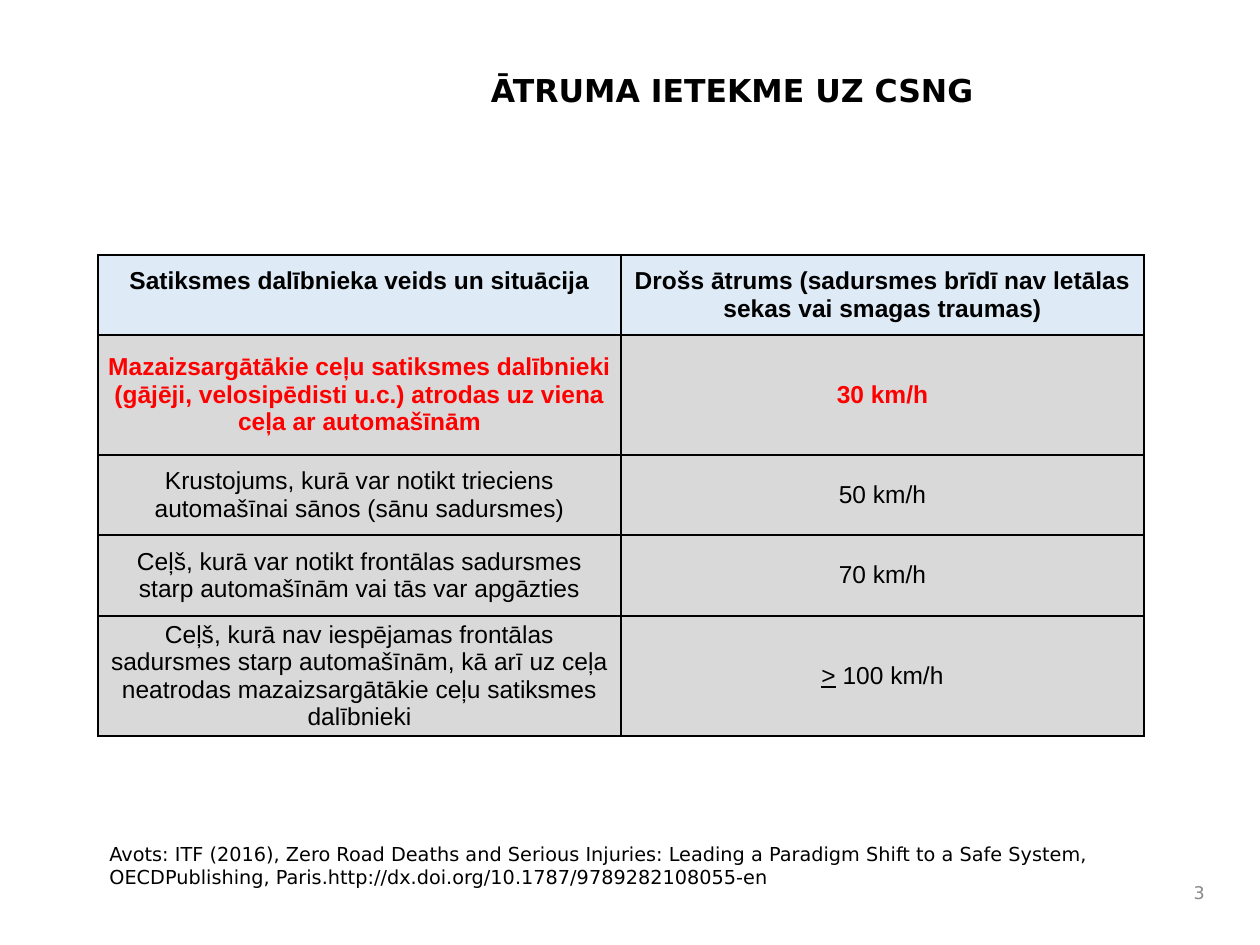
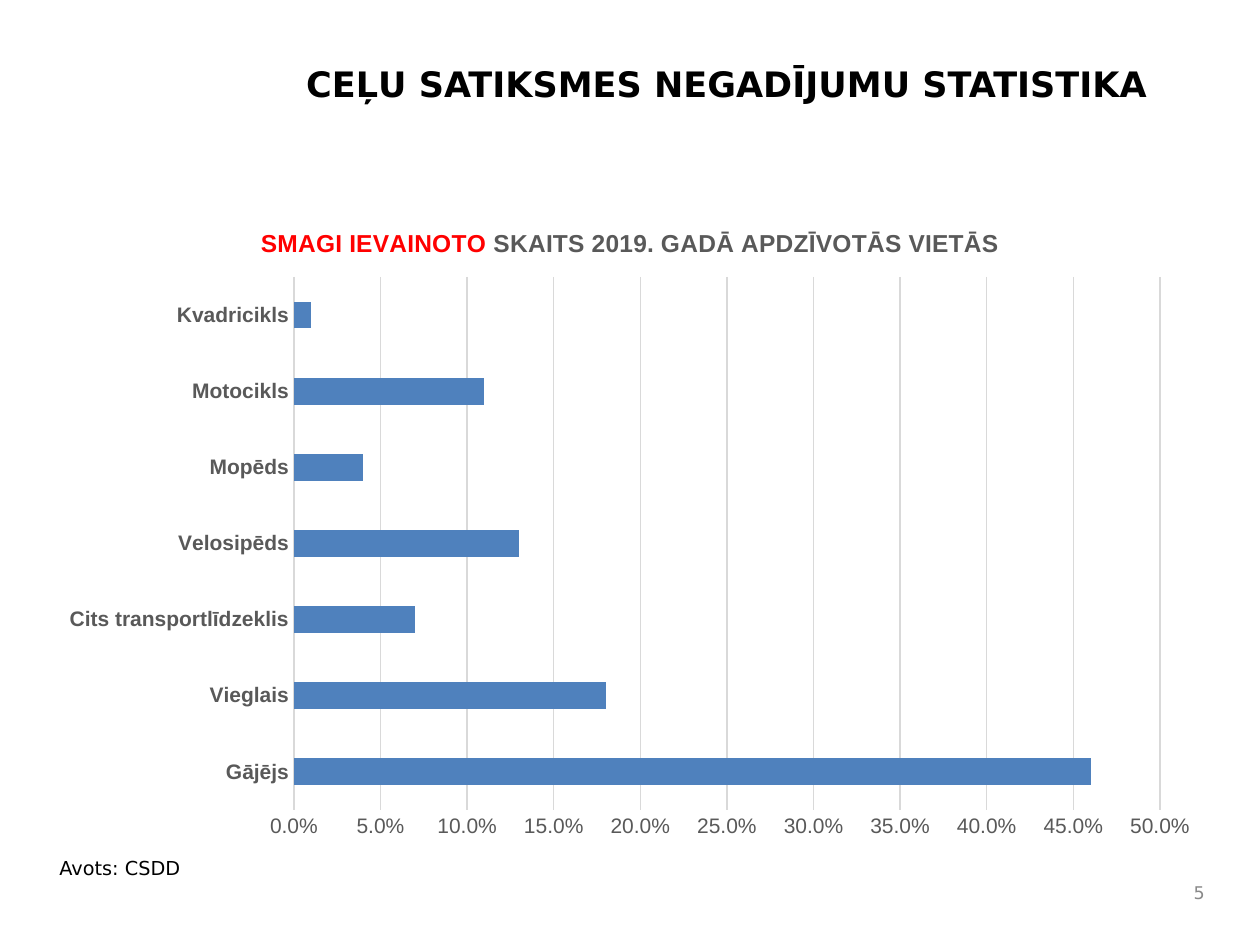
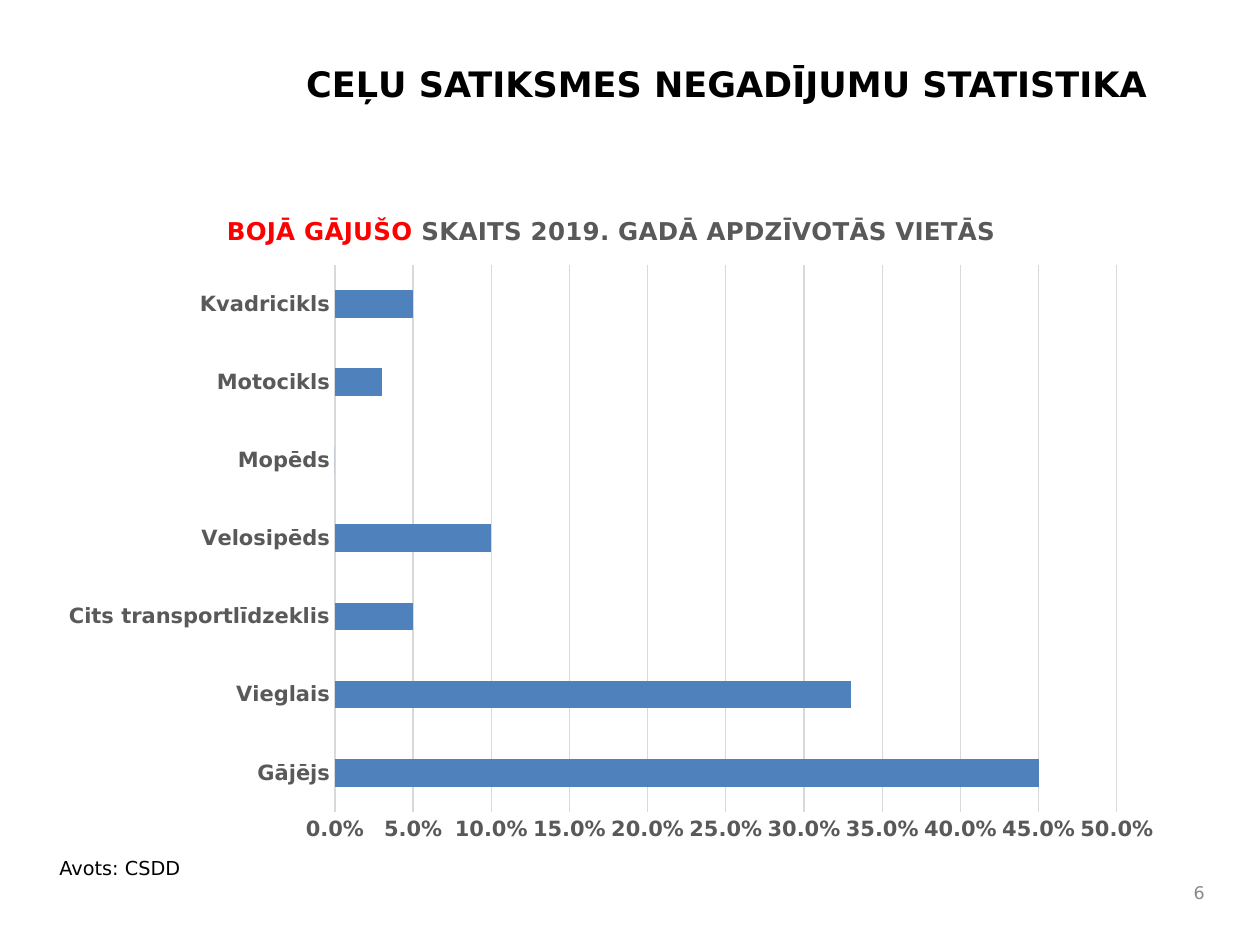
"""Build three slides on speed and road accident statistics."""
from dataclasses import dataclass

from lxml import etree
from pptx import Presentation, util as u
from pptx.chart.data import CategoryChartData
from pptx.dml.color import RGBColor
from pptx.enum import chart as charts, text
from pptx.oxml.ns import qn


@dataclass(frozen=True)
class Theme:
    black: str = "000000"
    red: str = "FF0000"
    grey: str = "595959"
    number_grey: str = "898989"
    rule: str = "D9D9D9"
    header: str = "DEEAF6"
    bar: str = "4F81BD"
    wide: str = "DejaVu Sans"
    plain: str = "Arial"
    title: int = 20
    short_title: int = 18
    body: int = 14
    axis: int = 12
    source: int = 11
    number: int = 10


THEME = Theme()
STATISTICS = "CEĻU SATIKSMES NEGADĪJUMU STATISTIKA"
ROAD_USERS = ["Gājējs", "Vieglais", "Cits transportlīdzeklis", "Velosipēds",
              "Mopēds", "Motocikls", "Kvadricikls"]
SPEEDS = [
    ("Satiksmes dalībnieka veids un situācija",
     "Drošs ātrums (sadursmes brīdī nav letālas sekas vai smagas traumas)"),
    ("Mazaizsargātākie ceļu satiksmes dalībnieki (gājēji, velosipēdisti u.c.) "
     "atrodas uz viena ceļa ar automašīnām", "30 km/h"),
    ("Krustojums, kurā var notikt trieciens automašīnai sānos (sānu sadursmes)",
     "50 km/h"),
    ("Ceļš, kurā var notikt frontālas sadursmes starp automašīnām "
     "vai tās var apgāzties", "70 km/h"),
    ("Ceļš, kurā nav iespējamas frontālas sadursmes starp automašīnām, kā arī "
     "uz ceļa neatrodas mazaizsargātākie ceļu satiksmes dalībnieki", "> 100 km/h"),
]


def px(length):
    """Turn px at 126 to the inch into EMU."""
    return u.Emu(round(length * 914400 / 126))


def style(font, size, color, face=THEME.wide, bold=False):
    """Set the size, colour, face and weight of a font."""
    font.size, font.name, font.bold = u.Pt(size), face, bold
    font.color.rgb = RGBColor.from_string(color)


def add_run(paragraph, wording, *look, **weight):
    """Add one styled run and return it."""
    run = paragraph.add_run()
    run.text = wording
    style(run.font, *look, **weight)
    return run


def add_label(slide, box, wording, size, color=THEME.black, bold=False,
              align=text.PP_ALIGN.LEFT, anchor=text.MSO_ANCHOR.TOP):
    """Add a wrapped line of text and return its frame."""
    frame = slide.shapes.add_textbox(*map(px, box)).text_frame
    frame.word_wrap = True
    frame.vertical_anchor = anchor
    frame.paragraphs[0].alignment = align
    add_run(frame.paragraphs[0], wording, size, color, bold=bold)
    return frame


def add_title(slide, box, wording, size, right_inset=13):
    """Add the centred slide title."""
    frame = add_label(slide, box, wording, size, bold=True,
                      align=text.PP_ALIGN.CENTER)
    frame.margin_right = px(right_inset)


def add_footer(slide, source_box, source, number):
    """Add the source line and the slide number."""
    add_label(slide, source_box, source, THEME.source)
    add_label(slide, (1175, 871, 42, 42), number, THEME.number, THEME.number_grey,
              align=text.PP_ALIGN.RIGHT, anchor=text.MSO_ANCHOR.MIDDLE)


def add_borders(cell):
    """Draw a thin black line on each side of a cell."""
    properties = cell._tc.get_or_add_tcPr()
    for side in ("lnL", "lnR", "lnT", "lnB"):
        line = etree.SubElement(properties, qn(f"a:{side}"), w=str(u.Pt(1)))
        fill = etree.SubElement(line, qn("a:solidFill"))
        etree.SubElement(fill, qn("a:srgbClr"), val=THEME.black)


def fill_cell(cell, wording, row):
    """Write and style one cell of the speed table."""
    add_borders(cell)
    cell.fill.solid()
    cell.fill.fore_color.rgb = RGBColor.from_string(
        THEME.header if row == 0 else THEME.rule)
    cell.margin_left = cell.margin_right = px(9)
    cell.margin_top = cell.margin_bottom = 0
    cell.vertical_anchor = text.MSO_ANCHOR.MIDDLE
    paragraph = cell.text_frame.paragraphs[0]
    paragraph.alignment = text.PP_ALIGN.CENTER
    look = (THEME.body, THEME.red if row == 1 else THEME.black, THEME.plain, row < 2)
    if wording.startswith(">"):
        add_run(paragraph, ">", *look).font.underline = True
        wording = wording[1:]
    add_run(paragraph, wording, *look)


def add_speed_table(slide):
    """Add the table of safe speeds."""
    heights = (80, 120, 80, 81, 120)
    table = slide.shapes.add_table(
        len(SPEEDS), 2, px(98), px(255), px(1046), px(sum(heights))).table
    table.first_row = table.horz_banding = False
    for column in table.columns:
        column.width = px(523)
    for row, (height, wordings) in enumerate(zip(heights, SPEEDS)):
        table.rows[row].height = px(height)
        for column, wording in enumerate(wordings):
            fill_cell(table.cell(row, column), wording, row)
    table.cell(0, 0).margin_bottom = px(28)


def place(parent, index, **settings):
    """Give a chart part a manual layout."""
    layout = parent.find(qn("c:layout"))
    if layout is None:
        layout = etree.Element(qn("c:layout"))
        parent.insert(index, layout)
    manual = etree.SubElement(layout, qn("c:manualLayout"))
    for tag, value in settings.items():
        etree.SubElement(manual, qn(f"c:{tag}"), val=str(value))


def style_axes(chart, face, bold_values):
    """Style the road user axis and the share axis."""
    users, shares = chart.category_axis, chart.value_axis
    for axis, bold in ((users, True), (shares, bold_values)):
        axis.major_tick_mark = axis.minor_tick_mark = charts.XL_TICK_MARK.NONE
        style(axis.tick_labels.font, THEME.axis, THEME.grey, face, bold)
    shares.has_major_gridlines = True
    for line in (users.format.line, shares.major_gridlines.format.line):
        line.color.rgb = RGBColor.from_string(THEME.rule)
        line.width = u.Pt(0.75)
    shares.format.line.fill.background()
    shares.minimum_scale, shares.maximum_scale, shares.major_unit = 0, 0.5, 0.05
    shares.tick_labels.number_format = "0.0%"
    shares.tick_labels.number_format_is_linked = False
    shares._element.find(f"{qn('c:txPr')}/{qn('a:bodyPr')}").set("rot", "0")


def add_share_chart(slide, box, plot, heading_at, victims, shares, face, bold_values):
    """Add the bar chart of victims by road user."""
    left, top, width, height = box
    data = CategoryChartData(number_format="0.0%")
    data.categories = ROAD_USERS
    data.add_series("Series 1", shares)
    chart = slide.shapes.add_chart(
        charts.XL_CHART_TYPE.BAR_CLUSTERED, *map(px, box), data).chart
    chart.has_legend = False
    style(chart.font, THEME.number, THEME.black, face, bold_values)
    style_axes(chart, face, bold_values)

    bars = chart.plots[0]
    bars.gap_width = 182
    bars.vary_by_categories = False
    fill = bars.series[0].format.fill
    fill.solid()
    fill.fore_color.rgb = RGBColor.from_string(THEME.bar)

    heading = chart.chart_title
    paragraph = heading.text_frame.paragraphs[0]
    for wording, color in ((victims, THEME.red),
                           (" SKAITS 2019. GADĀ APDZĪVOTĀS VIETĀS", THEME.grey)):
        add_run(paragraph, wording, THEME.body, color, face, True)
    place(heading._element, 1, xMode="edge", yMode="edge",
          x=(heading_at[0] - left) / width, y=(heading_at[1] - top) / height)
    place(bars._element.getparent(), 0, layoutTarget="inner",
          xMode="edge", yMode="edge",
          x=(plot[0] - left) / width, y=(plot[1] - top) / height,
          w=plot[2] / width, h=plot[3] / height)


def add_statistics_slide(deck, number, *chart_parts):
    """Add one slide of accident statistics."""
    slide = deck.slides.add_slide(deck.slide_layouts[6])
    add_footer(slide, (47, 850, 1192, 49), "Avots: CSDD", number)
    add_title(slide, (239, 56, 1000, 97), STATISTICS, THEME.title, right_inset=37)
    add_share_chart(slide, *chart_parts)


def add_speed_slide(deck):
    """Add the slide on safe speeds."""
    slide = deck.slides.add_slide(deck.slide_layouts[6])
    add_footer(slide, (97, 836, 1101, 76),
               "Avots: ITF (2016), Zero Road Deaths and Serious Injuries: Leading a "
               "Paradigm Shift to a Safe System, OECDPublishing, "
               "Paris.http://dx.doi.org/10.1787/9789282108055-en", "3")
    add_title(slide, (246, 65, 973, 50), "ĀTRUMA IETEKME UZ CSNG", THEME.short_title)
    add_speed_table(slide)


def main():
    """Build and save the deck."""
    deck = Presentation()
    deck.slide_width, deck.slide_height = px(1260), px(945)
    add_speed_slide(deck)
    add_statistics_slide(
        deck, "5", (47, 204, 1167, 646), (294, 277, 866, 533), (257, 224),
        "SMAGI IEVAINOTO", (0.46, 0.18, 0.07, 0.13, 0.04, 0.11, 0.01),
        THEME.plain, False)
    add_statistics_slide(
        deck, "6", (47, 190, 1129, 665), (335, 265, 782, 547), (223, 211),
        "BOJĀ GĀJUŠO", (0.45, 0.33, 0.05, 0.1, 0, 0.03, 0.05),
        THEME.wide, True)
    deck.save("out.pptx")


if __name__ == "__main__":
    main()
